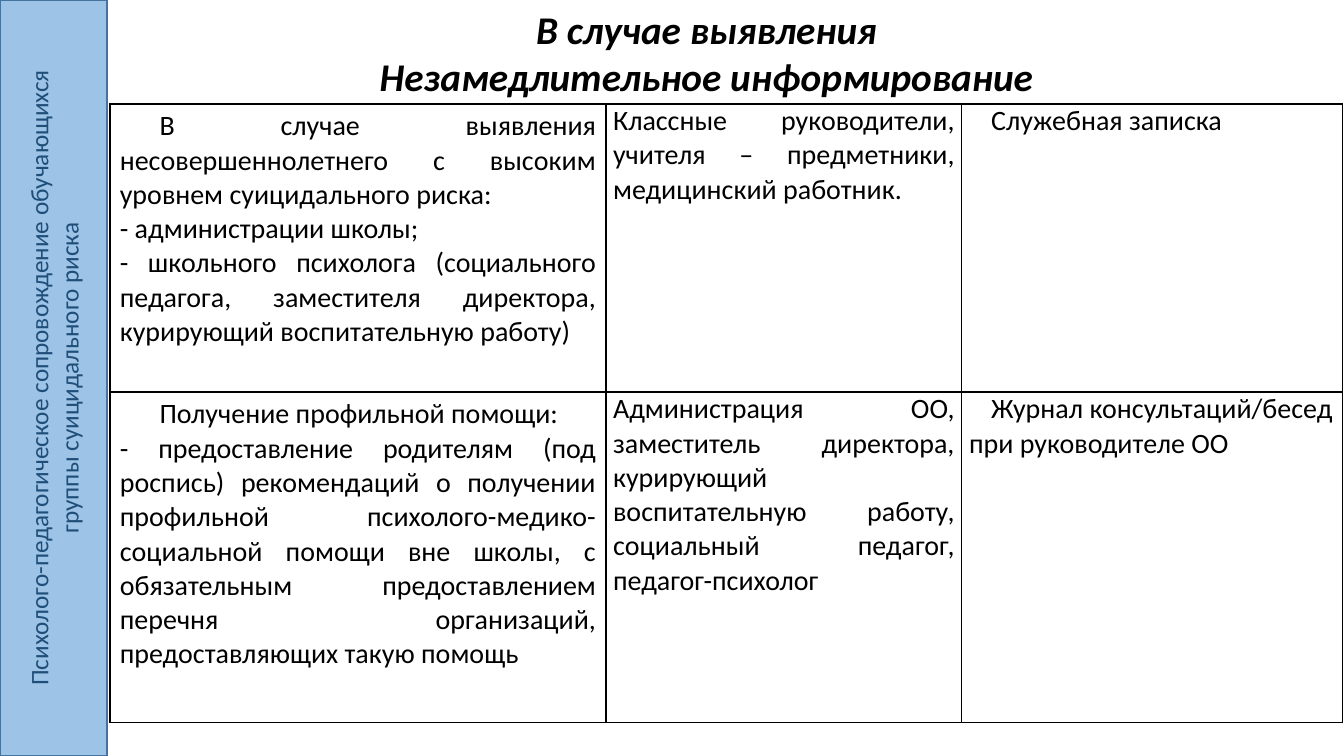
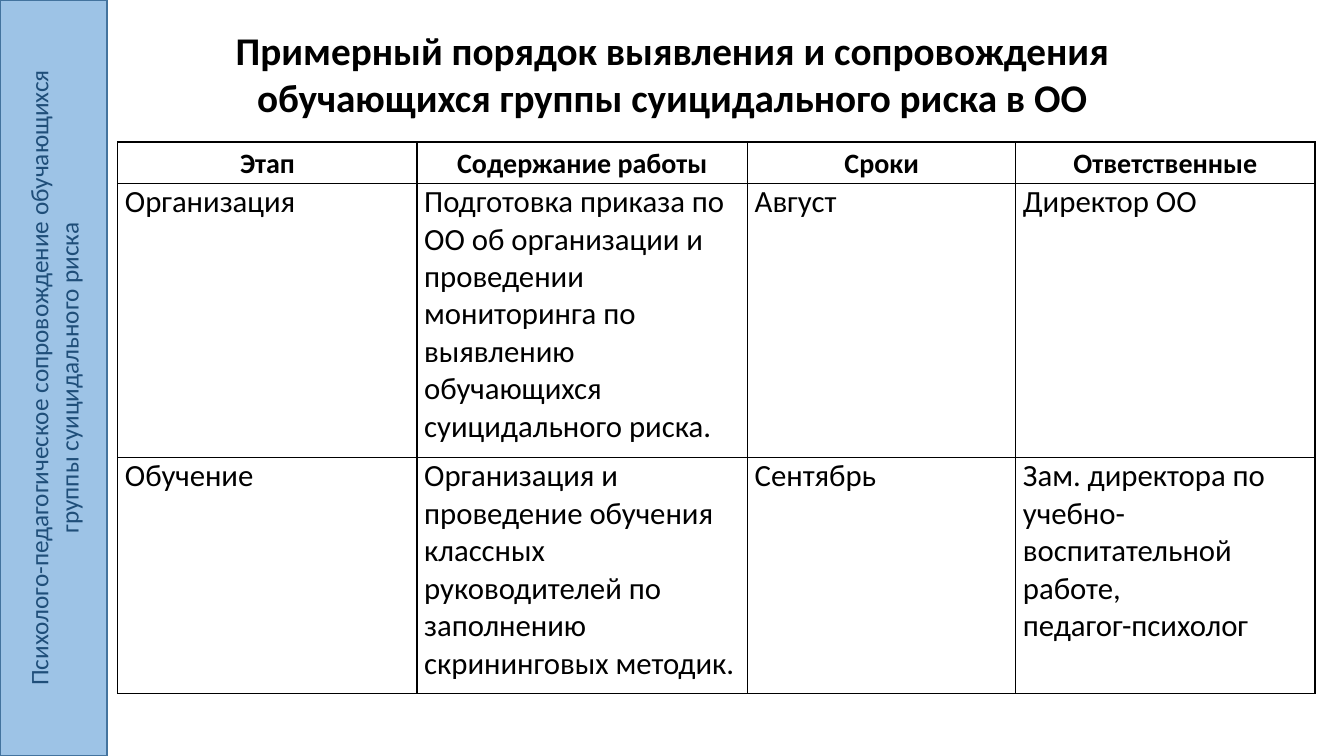
import pptx
import pptx.util
import pptx.dml.color
import pptx.enum.shapes
import pptx.enum.text
import pptx.oxml
import pptx.oxml.ns
import lxml.etree

Cm = pptx.util.Cm
Pt = pptx.util.Pt
Align = pptx.enum.text.PP_ALIGN
Anchor = pptx.enum.text.MSO_ANCHOR

FONT = "Calibri"
HUES = {"band": "9DC3E6", "edge": "43739E", "label": "1F4E79", "ink": "000000"}
WIDE, HIGH = 33.87, 19.05
BAND = (0, 0, 2.7, HIGH)
LABEL = "Психолого-педагогическое сопровождение обучающихся\nгруппы суицидального риска"

ALERT = {
    "title": "В случае выявления\nНезамедлительное информирование",
    "box": (3.3, 0, 29, 2.6),
    "slant": True,
    "place": (2.77, 2.62),
    "cols": (12.5, 8.97, 9.6),
    "rows": (7.26, 8.33),
    "size": 20,
    "head": False,
    "aligns": (Align.JUSTIFY, Align.JUSTIFY, Align.LEFT),
    "indents": (1, 0, 0.56),
    "pads": ((0.25, 0.13), (0.18, 0), (0.18, 0)),
    "cells": (
        ("В случае выявления несовершеннолетнего с высоким уровнем суицидального риска:\n"
         "- администрации школы;\n"
         "- школьного психолога (социального педагога, заместителя директора, "
         "курирующий воспитательную работу)",
         "Классные руководители, учителя – предметники, медицинский работник.",
         "Служебная записка"),
        ("Получение профильной помощи:\n"
         "- предоставление родителям (под роспись) рекомендаций о получении профильной "
         "психолого-медико-социальной помощи вне школы, с обязательным предоставлением "
         "перечня организаций, предоставляющих такую помощь",
         "Администрация ОО, заместитель директора, курирующий воспитательную работу, "
         "социальный педагог, педагог-психолог",
         "Журнал консультаций/бесед при руководителе ОО"),
    ),
}

STAGES = {
    "title": "Примерный порядок выявления и сопровождения\n"
             "обучающихся группы суицидального риска в ОО",
    "box": (0, 0.53, WIDE, 2.6),
    "slant": False,
    "place": (2.97, 3.58),
    "cols": (7.54, 8.33, 6.76, 7.54),
    "rows": (1.04, 6.91, 5.94),
    "size": 22,
    "head": True,
    "aligns": (Align.LEFT,) * 4,
    "indents": (0,) * 4,
    "pads": ((0.18, 0),) * 4,
    "cells": (
        ("Этап", "Содержание работы", "Сроки", "Ответственные"),
        ("Организация",
         "Подготовка приказа по ОО об организации и проведении мониторинга "
         "по выявлению обучающихся суицидального риска.",
         "Август", "Директор ОО"),
        ("Обучение",
         "Организация и проведение обучения классных руководителей "
         "по заполнению скрининговых методик.",
         "Сентябрь",
         "Зам. директора по учебно-воспитательной работе,\nпедагог-психолог"),
    ),
}


def tint(name):
    return pptx.dml.color.RGBColor.from_string(HUES[name])


def write(frame, text, size, align, hue="ink", bold=False, slant=False):
    frame.text = text
    frame.word_wrap = True
    for para in frame.paragraphs:
        para.alignment = align
        for run in para.runs:
            font = run.font
            font.name, font.size = FONT, Pt(size)
            font.bold, font.italic = bold, slant
            font.color.rgb = tint(hue)


def draw_band(slide, box):
    band = slide.shapes.add_shape(
        pptx.enum.shapes.MSO_SHAPE.RECTANGLE, *map(Cm, box))
    band.shadow.inherit = False
    band.fill.solid()
    band.fill.fore_color.rgb = tint("band")
    band.line.color.rgb = tint("edge")
    band.line.width = Pt(1)
    frame = band.text_frame
    write(frame, LABEL, 18, Align.CENTER, "label")
    frame.vertical_anchor = Anchor.MIDDLE
    frame._txBody.bodyPr.set("vert", "vert270")


def draw_title(slide, box, text, slant):
    title = slide.shapes.title
    title.left, title.top, title.width, title.height = map(Cm, box)
    frame = title.text_frame
    write(frame, text, 28, Align.CENTER, bold=True, slant=slant)
    frame.auto_size = pptx.enum.text.MSO_AUTO_SIZE.NONE
    frame.vertical_anchor = Anchor.TOP


def frame_cell(cell):
    props = cell._tc.get_or_add_tcPr()
    name = pptx.oxml.ns.qn
    for side in ("a:lnL", "a:lnR", "a:lnT", "a:lnB"):
        line = lxml.etree.SubElement(props, name(side), w=str(Pt(1)))
        fill = lxml.etree.SubElement(line, name("a:solidFill"))
        lxml.etree.SubElement(fill, name("a:srgbClr"), val=HUES["ink"])
    cell.fill.background()


def fill_cell(cell, text, plan, col, head):
    side, edge = plan["pads"][col]
    cell.margin_left = cell.margin_right = Cm(side)
    cell.margin_top = cell.margin_bottom = Cm(edge)
    frame = cell.text_frame
    if head:
        write(frame, text, 20, Align.CENTER, bold=True)
        frame.paragraphs[0].line_spacing = 1.15
    else:
        write(frame, text, plan["size"], plan["aligns"][col])
        props = frame.paragraphs[0]._p.get_or_add_pPr()
        props.set("indent", str(Cm(plan["indents"][col])))
    frame_cell(cell)


def draw_table(slide, place, plan):
    cols, rows = plan["cols"], plan["rows"]
    grid = slide.shapes.add_table(
        len(rows), len(cols), *map(Cm, (*place, sum(cols), sum(rows)))).table
    grid.first_row = grid.horz_banding = False
    for col, width in zip(grid.columns, cols):
        col.width = Cm(width)
    for row, height in zip(grid.rows, rows):
        row.height = Cm(height)
    for r, texts in enumerate(plan["cells"]):
        for c, text in enumerate(texts):
            fill_cell(grid.cell(r, c), text, plan, c, plan["head"] and r == 0)


def add_page(deck, plan):
    slide = deck.slides.add_slide(deck.slide_layouts.get_by_name("Title Only"))
    draw_band(slide, BAND)
    draw_title(slide, plan["box"], plan["title"], plan["slant"])
    draw_table(slide, plan["place"], plan)


def main():
    deck = pptx.Presentation()
    deck.slide_width, deck.slide_height = Cm(WIDE), Cm(HIGH)
    for plan in (ALERT, STAGES):
        add_page(deck, plan)
    deck.save("out.pptx")


if __name__ == "__main__":
    main()
